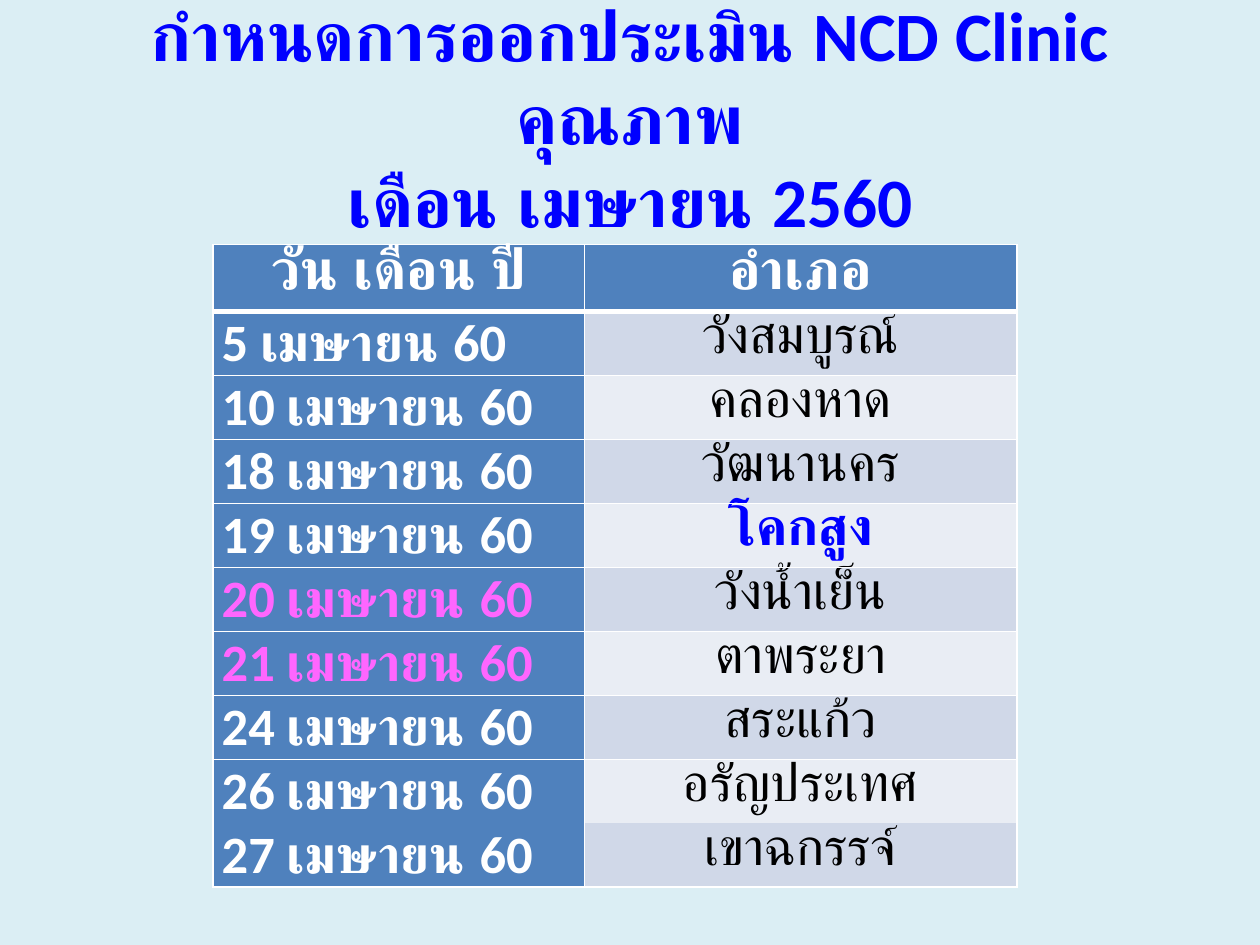
import pptx
import pptx.util
import pptx.dml.color
import pptx.enum.text
import pptx.oxml.ns
from lxml import etree

Inches, Pt = pptx.util.Inches, pptx.util.Pt
RGB = pptx.dml.color.RGBColor.from_string
ALIGN = pptx.enum.text.PP_ALIGN
MIDDLE = pptx.enum.text.MSO_ANCHOR.MIDDLE
qn = pptx.oxml.ns.qn

WIDTH, HEIGHT = Inches(10), Inches(7.5)
FONT = "Calibri"
COLORS = {
    "background": "DBEEF4", "blue": "0000FF", "pink": "FF66FF",
    "white": "FFFFFF", "black": "000000", "header": "4F81BD",
    "odd": "D0D8E8", "even": "E9EDF4",
}

TITLE_LINES = ["กำหนดการออกประเมิน NCD Clinic คุณภาพ", "เดือน เมษายน 2560"]
HEADINGS = ["วัน เดือน ปี", "อำเภอ"]
# Day in April and the district visited
VISITS = [
    (5, "วังสมบูรณ์"), (10, "คลองหาด"), (18, "วัฒนานคร"),
    (19, "โคกสูง"), (20, "วังน้ำเย็น"), (21, "ตาพระยา"),
    (24, "สระแก้ว"), (26, "อรัญประเทศ"), (27, "เขาฉกรรจ์"),
]
PINK_DAYS = {20, 21}
BLUE_DISTRICT = "โคกสูง"


def add_run(paragraph, text, size, color, bold):
    run = paragraph.add_run()
    run.text = text
    run.font.name = FONT
    run.font.size = Pt(size)
    run.font.bold = bold
    run.font.color.rgb = RGB(COLORS[color])


def set_border(cell, side, width):
    """Draw one white cell edge; a width of 0 hides it."""
    line = etree.SubElement(cell._tc.get_or_add_tcPr(), qn(f"a:ln{side}"),
                            w=str(int(Pt(width))))
    if width:
        fill = etree.SubElement(line, qn("a:solidFill"))
        etree.SubElement(fill, qn("a:srgbClr"), val=COLORS["white"])
    else:
        etree.SubElement(line, qn("a:noFill"))


def fill_cell(cell, text, size, color, bold, align, fill, top=1, bottom=1):
    cell.margin_left = cell.margin_right = Inches(0.07)
    cell.margin_top = cell.margin_bottom = 0
    for side, width in zip("LRTB", (1, 1, top, bottom)):
        set_border(cell, side, width)
    cell.fill.solid()
    cell.fill.fore_color.rgb = RGB(COLORS[fill])
    paragraph = cell.text_frame.paragraphs[0]
    paragraph.alignment = align
    add_run(paragraph, text, size, color, bold)


def add_title(slide, left, top, width, height):
    frame = slide.shapes.add_textbox(left, top, width, height).text_frame
    frame.word_wrap = True
    frame.vertical_anchor = MIDDLE
    paragraph = frame.paragraphs[0]
    paragraph.alignment = ALIGN.CENTER
    for index, line in enumerate(TITLE_LINES):
        if index:
            paragraph.add_line_break()
        add_run(paragraph, line, 39.6, "blue", True)


def add_schedule(slide, left, top, width, height):
    row_count = len(VISITS) + 1
    schedule = slide.shapes.add_table(row_count, 2, left, top, width, height).table
    schedule.first_row = schedule.horz_banding = False
    date_width = int(width * 0.4624)
    schedule.columns[0].width = date_width
    schedule.columns[1].width = width - date_width

    # Heading row is lower than the equal rows below it
    heading_height = Inches(0.46)
    schedule.rows[0].height = heading_height
    for index in range(1, row_count):
        schedule.rows[index].height = (height - heading_height) // len(VISITS)

    for column, heading in enumerate(HEADINGS):
        fill_cell(schedule.cell(0, column), heading, 32, "white", True,
                  ALIGN.CENTER, "header", bottom=3)

    # Dates on the left, districts on banded cells; the last two rows join
    last = len(VISITS)
    for row, (day, district) in enumerate(VISITS, start=1):
        edges = {"top": 3 if row == 1 else 0 if row == last else 1,
                 "bottom": 0 if row == last - 1 else 1}
        fill_cell(schedule.cell(row, 0), f"{day} เมษายน 60", 30,
                  "pink" if day in PINK_DAYS else "white", True,
                  ALIGN.LEFT, "header", **edges)
        marked = district == BLUE_DISTRICT
        fill_cell(schedule.cell(row, 1), district, 30,
                  "blue" if marked else "black", marked,
                  ALIGN.CENTER, "odd" if row % 2 else "even", **edges)


def main():
    deck = pptx.Presentation()
    deck.slide_width, deck.slide_height = WIDTH, HEIGHT
    slide = deck.slides.add_slide(deck.slide_layouts[6])
    slide.background.fill.solid()
    slide.background.fill.fore_color.rgb = RGB(COLORS["background"])

    add_title(slide, int(WIDTH * 0.05), int(HEIGHT * 0.04),
              int(WIDTH * 0.9), int(HEIGHT / 6))
    add_schedule(slide, Inches(1.69), Inches(1.94), Inches(6.38), Inches(5.03))
    deck.save("out.pptx")


if __name__ == "__main__":
    main()
